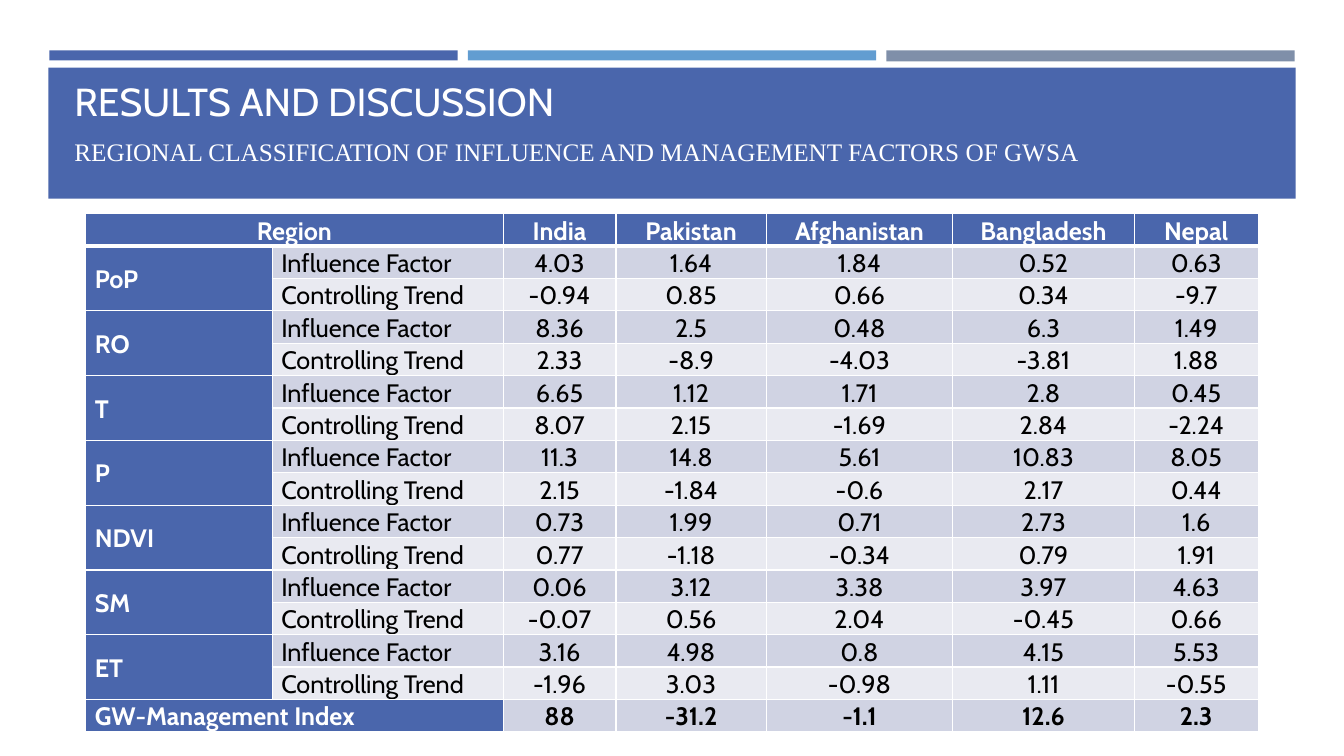
"""Build the slide on regional influence and management factors of GWSA."""
from dataclasses import dataclass

from lxml import etree
from pptx import Presentation
from pptx import util as u
from pptx.dml.color import RGBColor
from pptx.enum import shapes, text
from pptx.oxml import ns

BLUE = RGBColor(0x4A, 0x66, 0xAC)
SKY = RGBColor(0x62, 0x9D, 0xD1)
SLATE = RGBColor(0x7F, 0x8F, 0xA9)
DARK_BAND = RGBColor(0xD0, 0xD3, 0xE3)
LIGHT_BAND = RGBColor(0xE9, 0xEA, 0xF1)
WHITE = RGBColor(0xFF, 0xFF, 0xFF)
BLACK = RGBColor(0, 0, 0)
SANS, SERIF = "Cabin", "Times New Roman"


@dataclass
class Band:
    left: float
    top: float
    width: float
    height: float
    color: RGBColor


@dataclass
class Factor:
    label: str
    influence: list[str]
    trend: list[str]


@dataclass
class CellStyle:
    fill: RGBColor
    color: RGBColor
    bold: bool
    centred: bool
    top: int = 1
    bottom: int = 1


BANDS = [
    Band(0.49, 0.5, 4.05, 0.1, BLUE),
    Band(4.64, 0.5, 4.05, 0.1, SKY),
    Band(8.79, 0.5, 4.05, 0.11, SLATE),
    Band(0.48, 0.67, 12.37, 1.3, BLUE),
]
COUNTRIES = ["India", "Pakistan", "Afghanistan", "Bangladesh", "Nepal"]
FACTORS = [
    Factor("PoP", ["4.03", "1.64", "1.84", "0.52", "0.63"],
           ["-0.94", "0.85", "0.66", "0.34", "-9.7"]),
    Factor("RO", ["8.36", "2.5", "0.48", "6.3", "1.49"],
           ["2.33", "-8.9", "-4.03", "-3.81", "1.88"]),
    Factor("T", ["6.65", "1.12", "1.71", "2.8", "0.45"],
           ["8.07", "2.15", "-1.69", "2.84", "-2.24"]),
    Factor("P", ["11.3", "14.8", "5.61", "10.83", "8.05"],
           ["2.15", "-1.84", "-0.6", "2.17", "0.44"]),
    Factor("NDVI", ["0.73", "1.99", "0.71", "2.73", "1.6"],
           ["0.77", "-1.18", "-0.34", "0.79", "1.91"]),
    Factor("SM", ["0.06", "3.12", "3.38", "3.97", "4.63"],
           ["-0.07", "0.56", "2.04", "-0.45", "0.66"]),
    Factor("ET", ["3.16", "4.98", "0.8", "4.15", "5.53"],
           ["-1.96", "3.03", "-0.98", "1.11", "-0.55"]),
]
INDEX = ["88", "-31.2", "-1.1", "12.6", "2.3"]
COLUMN_WIDTHS = [1.85, 2.29, 1.12, 1.49, 1.85, 1.8, 1.23]
ROW_HEIGHT = 0.3


def format_run(run, size: float, font: str, color: RGBColor, bold: bool = False) -> None:
    run.font.size = u.Pt(size)
    run.font.name = font
    run.font.color.rgb = color
    run.font.bold = bold


def draw_band(slide, band: Band) -> None:
    bar = slide.shapes.add_shape(
        shapes.MSO_SHAPE.RECTANGLE, u.Inches(band.left), u.Inches(band.top),
        u.Inches(band.width), u.Inches(band.height))
    bar.shadow.inherit = False
    bar.fill.solid()
    bar.fill.fore_color.rgb = band.color
    bar.line.fill.background()


def draw_heading(slide) -> None:
    heading = slide.shapes.add_textbox(
        u.Inches(0.64), u.Inches(0.77), u.Inches(12.06), u.Inches(1.11)).text_frame
    heading.word_wrap = True
    heading.text = ("RESULTS AND DISCUSSION\n"
                    "REGIONAL CLASSIFICATION OF INFLUENCE AND MANAGEMENT FACTORS OF GWSA")
    title, subtitle = heading.paragraphs
    for paragraph, size, font in ((title, 27.9, SANS), (subtitle, 18, SERIF)):
        paragraph.line_spacing = 0.9
        format_run(paragraph.runs[0], size, font, WHITE)
    subtitle.space_before = u.Pt(11)


def add_borders(cell, style: CellStyle) -> None:
    properties = cell._tc.get_or_add_tcPr()
    for side, points in (("L", 1), ("R", 1), ("T", style.top), ("B", style.bottom)):
        border = etree.SubElement(properties, ns.qn(f"a:ln{side}"), w=str(u.Pt(points)))
        fill = etree.SubElement(border, ns.qn("a:solidFill"))
        etree.SubElement(fill, ns.qn("a:srgbClr"), val=str(WHITE))


def fill_cell(cell, words: str, style: CellStyle) -> None:
    add_borders(cell, style)
    cell.fill.solid()
    cell.fill.fore_color.rgb = style.fill
    cell.vertical_anchor = text.MSO_ANCHOR.MIDDLE
    cell.margin_left = cell.margin_right = u.Inches(0.09)
    cell.margin_top = cell.margin_bottom = 0
    cell.text = words
    paragraph = cell.text_frame.paragraphs[0]
    paragraph.line_spacing = 1.07
    paragraph.alignment = text.PP_ALIGN.CENTER if style.centred else text.PP_ALIGN.LEFT
    paragraph.font.size = u.Pt(18)
    for run in paragraph.runs:
        format_run(run, 18, SANS, style.color, style.bold)


def table_rows() -> list[list[str]]:
    rows = [["Region", "", *COUNTRIES]]
    for factor in FACTORS:
        rows.append([factor.label, "Influence Factor", *factor.influence])
        rows.append(["", "Controlling Trend", *factor.trend])
    return rows + [["GW-Management Index", "", *INDEX]]


def cell_style(row: int, column: int, last: int) -> CellStyle:
    if row == 0:
        return CellStyle(BLUE, WHITE, True, True, bottom=3)
    top = 3 if row == 1 else 1
    if column == 0 or (row == last and column == 1):
        return CellStyle(BLUE, WHITE, True, False, top)
    band = DARK_BAND if row % 2 else LIGHT_BAND
    return CellStyle(band, BLACK, row == last, column > 1, top)


def draw_table(slide) -> None:
    rows = table_rows()
    last = len(rows) - 1
    table = slide.shapes.add_table(
        len(rows), len(COLUMN_WIDTHS), u.Inches(0.85), u.Inches(2.12),
        u.Inches(sum(COLUMN_WIDTHS)), u.Inches(ROW_HEIGHT * len(rows))).table
    for column, width in zip(table.columns, COLUMN_WIDTHS):
        column.width = u.Inches(width)
    for row in table.rows:
        row.height = u.Inches(ROW_HEIGHT)
    for r, words in enumerate(rows):
        for c, word in enumerate(words):
            fill_cell(table.cell(r, c), word, cell_style(r, c, last))
    for r in (0, last):
        table.cell(r, 0).merge(table.cell(r, 1))
    for r in range(1, last, 2):
        table.cell(r, 0).merge(table.cell(r + 1, 0))


def main() -> None:
    deck = Presentation()
    deck.slide_width, deck.slide_height = u.Inches(13.33), u.Inches(7.5)
    slide = deck.slides.add_slide(deck.slide_layouts[6])
    for band in BANDS:
        draw_band(slide, band)
    draw_heading(slide)
    draw_table(slide)
    deck.save("out.pptx")


if __name__ == "__main__":
    main()
